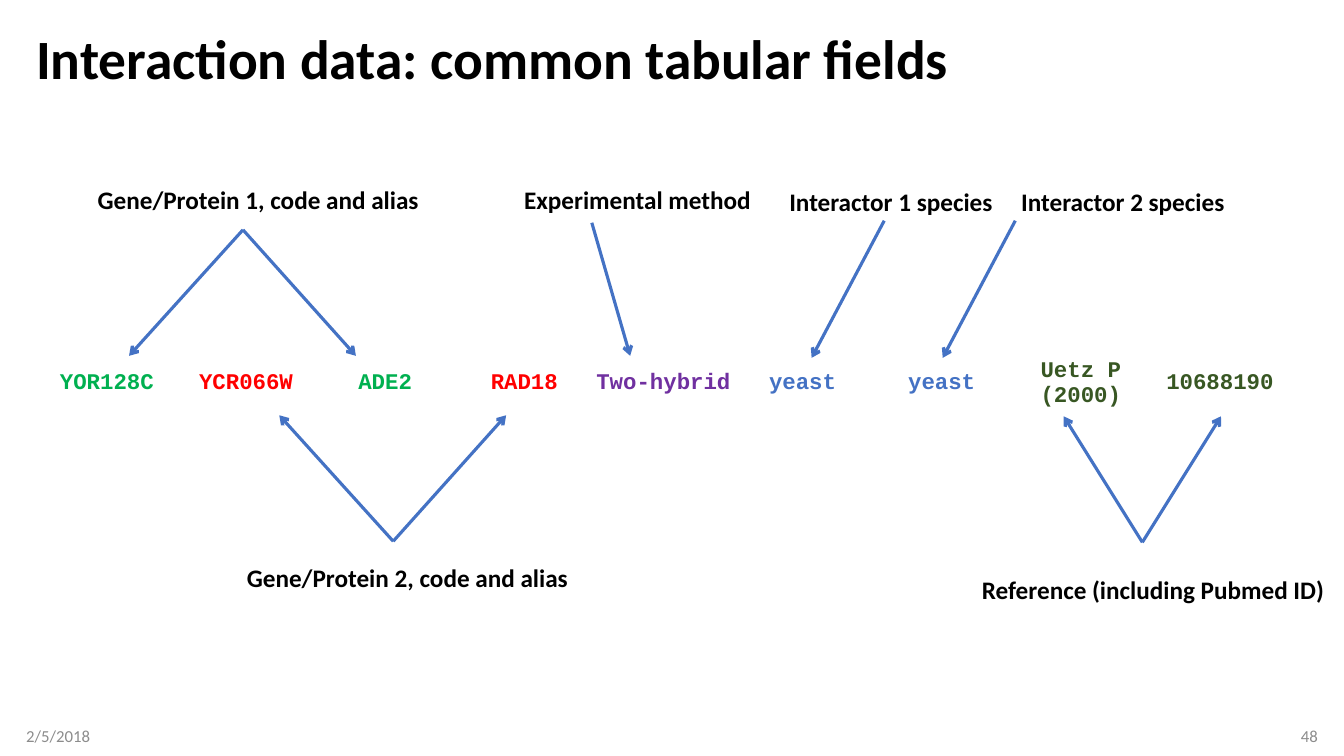
from lxml.etree import SubElement
from pptx import Presentation
from pptx.dml.color import RGBColor
from pptx.enum.shapes import MSO_CONNECTOR
from pptx.enum.text import MSO_ANCHOR, MSO_AUTO_SIZE, PP_ALIGN
from pptx.oxml.ns import qn
from pptx.util import Inches, Pt

TITLE = "Interaction data: common tabular fields"
DATE, PAGE_NUMBER = "2/5/2018", "48"

BLACK, GRAY, BLUE = "000000", "8C8C8C", "4472C4"
GREEN, RED, PURPLE, OLIVE = "00B050", "FF0000", "7030A0", "385723"

RECORD = [
    ("YOR128C", GREEN), ("YCR066W", RED), ("ADE2", GREEN), ("RAD18", RED),
    ("Two-hybrid", PURPLE), ("yeast", BLUE), ("yeast", BLUE),
    ("Uetz P (2000)", OLIVE), ("10688190", OLIVE),
]
RECORD_LEFT, RECORD_TOP, RECORD_HEIGHT = 0.37, 3.53, 0.54
FIELD_WIDTH = 1.38

# label, (left, top, width), arrow start, arrow tips
FIELD_NOTES = [
    ("Gene/Protein 1, code and alias", (0.87, 1.78, 3.41),
     (2.41, 2.28), [(1.28, 3.53), (3.53, 3.53)]),
    ("Gene/Protein 2, code and alias", (2.35, 5.53, 3.41),
     (3.9, 5.37), [(2.77, 4.12), (5.02, 4.12)]),
    ("Reference (including Pubmed ID)", (9.64, 5.65, 3.62),
     (11.33, 5.38), [(12.11, 4.13), (10.55, 4.13)]),
    ("Experimental method", (5.1, 1.78, 2.47), (5.87, 2.21), [(6.25, 3.53)]),
    ("Interactor 1 species", (7.73, 1.8, 2.23), (8.77, 2.19), [(8.05, 3.55)]),
    ("Interactor 2 species", (10.03, 1.8, 2.23), (10.07, 2.19), [(9.35, 3.55)]),
]


def rgb(color):
    return RGBColor.from_string(color)


def style_text(frame, text, size, color, bold=True, font="Calibri", align=PP_ALIGN.LEFT):
    frame.text = text
    paragraph = frame.paragraphs[0]
    paragraph.alignment = align
    run_font = paragraph.runs[0].font
    run_font.name, run_font.size, run_font.bold = font, Pt(size), bold
    run_font.color.rgb = rgb(color)


def add_text(slide, bounds, text, size, color, wrap=True, **style):
    frame = slide.shapes.add_textbox(*map(Inches, bounds)).text_frame
    frame.word_wrap = wrap
    style_text(frame, text, size, color, **style)
    return frame


def add_arrow(slide, start, tip):
    arrow = slide.shapes.add_connector(
        MSO_CONNECTOR.STRAIGHT, *map(Inches, start + tip))
    arrow.line.color.rgb = rgb(BLUE)
    arrow.line.width = Pt(2.25)
    SubElement(arrow.line._get_or_add_ln(), qn("a:tailEnd"), type="arrow")
    SubElement(arrow._element.spPr, qn("a:effectLst"))


def add_record(slide):
    table = slide.shapes.add_table(
        1, len(RECORD), Inches(RECORD_LEFT), Inches(RECORD_TOP),
        Inches(FIELD_WIDTH * len(RECORD)), Inches(RECORD_HEIGHT)).table
    table.first_row = table.horz_banding = False
    for column, cell, (value, color) in zip(table.columns, table.rows[0].cells, RECORD):
        column.width = Inches(FIELD_WIDTH)
        cell.fill.background()
        cell.vertical_anchor = MSO_ANCHOR.MIDDLE
        cell.margin_left = cell.margin_right = cell.margin_top = Inches(0.01)
        cell.margin_bottom = 0
        style_text(cell.text_frame, value, 16, color,
                   font="Courier New", align=PP_ALIGN.CENTER)


def main():
    presentation = Presentation()
    presentation.slide_width = Inches(13.33)
    presentation.slide_height = Inches(7.5)
    slide = presentation.slides.add_slide(presentation.slide_layouts[6])

    title = add_text(slide, (0.26, 0.25, 12.81, 0.72), TITLE, 39.6, BLACK)
    title.vertical_anchor = MSO_ANCHOR.MIDDLE
    title.paragraphs[0].line_spacing = 0.9

    date = add_text(slide, (0.26, 7.1, 3, 0.4), DATE, 12, GRAY, bold=False)
    date.margin_left = 0
    page = add_text(slide, (10.07, 7.1, 3, 0.4), PAGE_NUMBER, 12, GRAY,
                    bold=False, align=PP_ALIGN.RIGHT)
    page.margin_right = 0
    date.vertical_anchor = page.vertical_anchor = MSO_ANCHOR.MIDDLE

    add_record(slide)
    for label, place, start, tips in FIELD_NOTES:
        for tip in tips:
            add_arrow(slide, start, tip)
        note = add_text(slide, place + (0.4,), label, 18, BLACK, wrap=False)
        note.auto_size = MSO_AUTO_SIZE.SHAPE_TO_FIT_TEXT

    presentation.save("out.pptx")


if __name__ == "__main__":
    main()
